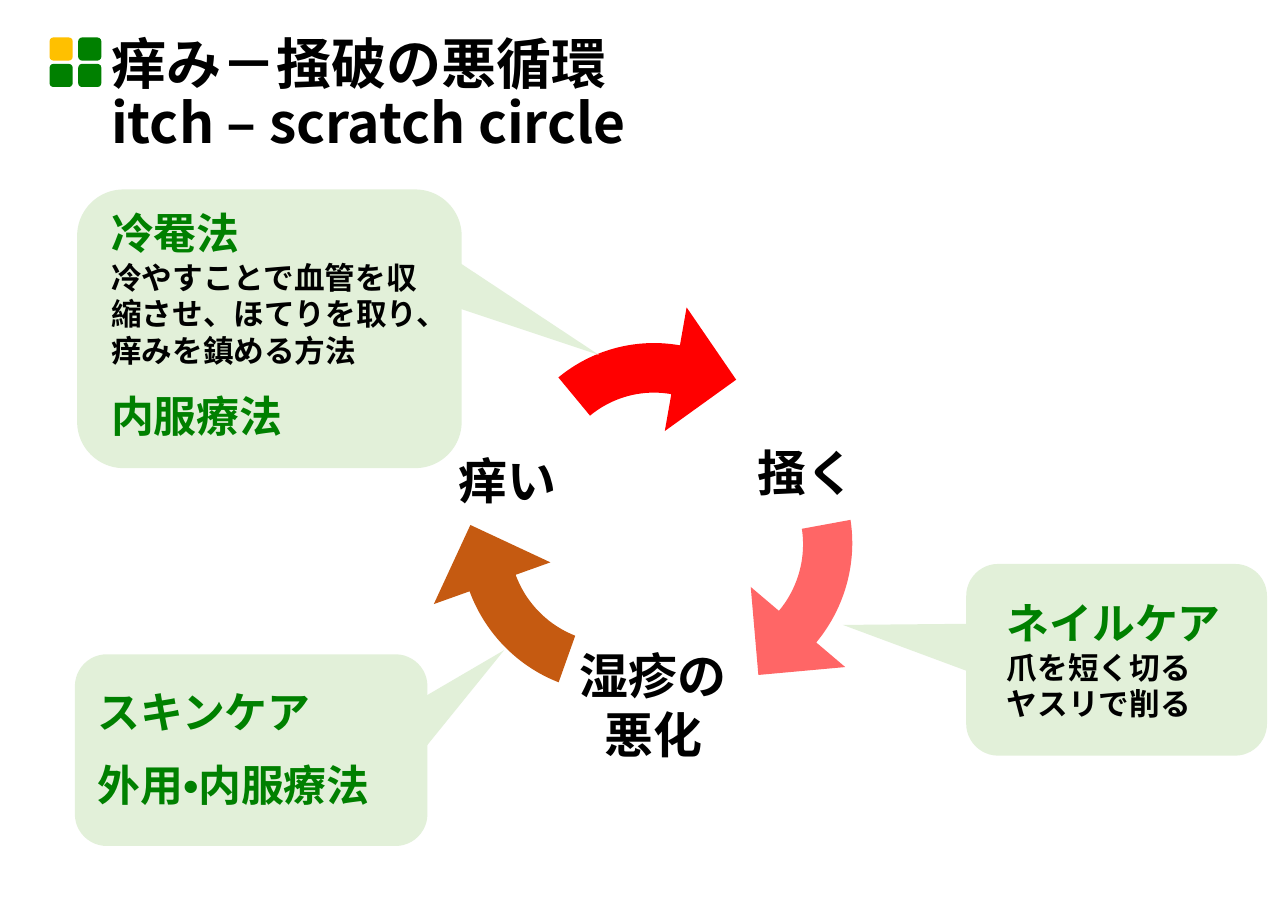
"""Build the itch and scratch circle slide with its care callouts."""
import math
from dataclasses import dataclass

import lxml.etree
import pptx
import pptx.dml.color
import pptx.enum.shapes
import pptx.enum.text
import pptx.oxml.ns
import pptx.util

Inches = pptx.util.Inches
qn = pptx.oxml.ns.qn
SHAPE = pptx.enum.shapes.MSO_SHAPE
ALIGN = pptx.enum.text.PP_ALIGN
ANCHOR = pptx.enum.text.MSO_ANCHOR
COLORS = {
    "text": "000000",
    "green": "008000",
    "yellow": "FFC000",
    "callout": "E2F0D9",
    "red": "FF0000",
    "pink": "FF6666",
    "brown": "C55A11",
}
BODY_FONT = "Arial"
TITLE_FONT = "Noto Sans CJK JP"
RING_WIDTH, RING_HEIGHT = 2.69, 2.73
OUTER_RADIUS, INNER_RADIUS = 1.36, 0.91
OUTER_BARB, INNER_BARB, TIP_RADIUS = 1.71, 0.57, 1.27
TAIL_ANGLE, TOP_ANGLE, NECK_ANGLE, TIP_ANGLE = -129.6, -90, -80, -54
ARROW_SEGMENTS = "CCLCCLLL"


@dataclass(frozen=True)
class Bounds:
    left: float
    top: float
    width: float
    height: float

    def lengths(self) -> list:
        return [Inches(v) for v in (self.left, self.top, self.width, self.height)]


@dataclass(frozen=True)
class Line:
    text: str
    size: int
    color: str = "text"
    space_before: int = 0


@dataclass(frozen=True)
class Callout:
    bubble: Bounds
    pointer: Bounds
    rotation: float
    apex: float
    text_bounds: Bounds
    lines: tuple


@dataclass(frozen=True)
class CycleArrow:
    bounds: Bounds
    rotation: float
    color: str


@dataclass(frozen=True)
class CycleLabel:
    bounds: Bounds
    texts: tuple


CALLOUTS = (
    Callout(Bounds(0.7, 1.72, 3.49, 2.53), Bounds(4.32, 2.04, 0.48, 1.78), 123.5, 0,
            Bounds(0.91, 1.83, 3.18, 2.29),
            (Line("冷罨法", 28, "green"),
             Line("冷やすことで血管を収縮させ、ほてりを取り、痒みを鎮める方法", 20),
             Line("内服療法", 28, "green", 14))),
    Callout(Bounds(0.68, 5.94, 3.2, 1.74), Bounds(3.75, 5.61, 0.48, 1.27), 39, 1,
            Bounds(0.79, 6.18, 3.07, 1.27),
            (Line("スキンケア", 28, "green"),
             Line("外用•内服療法", 28, "green", 14))),
    Callout(Bounds(8.77, 5.12, 2.73, 1.74), Bounds(8.05, 5.15, 0.48, 1.3), 278.7, 0.56,
            Bounds(9.04, 5.37, 2.67, 1.25),
            (Line("ネイルケア", 28, "green"),
             Line("爪を短く切る", 20),
             Line("ヤスリで削る", 20))),
)
ARROWS = (
    CycleArrow(Bounds(4.59, 3.11, 2.69, 2.73), 0, "red"),
    CycleArrow(Bounds(5.02, 3.62, 2.73, 2.69), 120, "pink"),
    CycleArrow(Bounds(4.16, 3.57, 2.73, 2.69), 240, "brown"),
)
LABELS = (
    CycleLabel(Bounds(6.78, 3.74, 1.08, 1.09), ("掻く",)),
    CycleLabel(Bounds(5.18, 5.85, 1.5, 1.09), ("湿疹の", "悪化")),
    CycleLabel(Bounds(4.07, 3.81, 1.08, 1.09), ("痒い",)),
)


def paint(shape, color: str) -> None:
    shape.shadow.inherit = False
    shape.fill.solid()
    shape.fill.fore_color.rgb = pptx.dml.color.RGBColor.from_string(COLORS[color])
    shape.line.fill.background()


def add_preset(page, preset, bounds: Bounds, color: str):
    shape = page.shapes.add_shape(preset, *bounds.lengths())
    paint(shape, color)
    return shape


def add_text(page, bounds: Bounds, lines: tuple, font: str = BODY_FONT):
    box = page.shapes.add_textbox(*bounds.lengths())
    frame = box.text_frame
    frame.word_wrap = True
    for index, line in enumerate(lines):
        para = frame.add_paragraph() if index else frame.paragraphs[0]
        para.text = line.text
        if line.space_before:
            para.space_before = pptx.util.Pt(line.space_before)
        for span in para.runs:
            span.font.size = pptx.util.Pt(line.size)
            span.font.bold = True
            span.font.name = font
            span.font.color.rgb = pptx.dml.color.RGBColor.from_string(COLORS[line.color])
            east_asian = lxml.etree.SubElement(span.font._element, qn("a:ea"))
            east_asian.set("typeface", font)
    return frame


def add_label(page, label: CycleLabel) -> None:
    frame = add_text(page, label.bounds, tuple(Line(text, 32) for text in label.texts))
    frame.word_wrap = False
    frame.vertical_anchor = ANCHOR.MIDDLE
    frame.margin_left = frame.margin_right = frame.margin_top = frame.margin_bottom = 0
    for para in frame.paragraphs:
        para.alignment = ALIGN.CENTER


def ring_point(radius: float, angle: float, tangent: float = 0) -> tuple:
    """Return a point on the ring, moved along its tangent by a share of the radius."""
    turn = math.radians(angle)
    across = math.cos(turn) - tangent * math.sin(turn)
    down = math.sin(turn) + tangent * math.cos(turn)
    return (Inches(RING_WIDTH / 2 + radius * across),
            Inches(RING_HEIGHT / 2 + radius * down))


def arc_points(radius: float, start: float, end: float) -> list:
    """Return the two handles and the end of a cubic arc."""
    handle = 4 / 3 * math.tan(math.radians(end - start) / 4)
    return [ring_point(radius, start, handle), ring_point(radius, end, -handle),
            ring_point(radius, end)]


def add_arrow(page, arrow: CycleArrow) -> None:
    outline = [
        *arc_points(INNER_RADIUS, NECK_ANGLE, TOP_ANGLE),
        *arc_points(INNER_RADIUS, TOP_ANGLE, TAIL_ANGLE),
        ring_point(OUTER_RADIUS, TAIL_ANGLE),
        *arc_points(OUTER_RADIUS, TAIL_ANGLE, TOP_ANGLE),
        *arc_points(OUTER_RADIUS, TOP_ANGLE, NECK_ANGLE),
        ring_point(OUTER_BARB, NECK_ANGLE),
        ring_point(TIP_RADIUS, TIP_ANGLE),
        ring_point(INNER_BARB, NECK_ANGLE),
    ]
    builder = page.shapes.build_freeform(*ring_point(INNER_RADIUS, NECK_ANGLE))
    builder.add_line_segments(outline, close=True)
    shape = builder.convert_to_shape()
    track = next(shape._element.iter(qn("a:path")))
    for vertex in track.iter(qn("a:pt")):
        vertex.set("x", str(int(vertex.get("x")) + shape.left))
        vertex.set("y", str(int(vertex.get("y")) + shape.top))
    track.set("w", str(Inches(RING_WIDTH)))
    track.set("h", str(Inches(RING_HEIGHT)))
    steps = iter(track.findall(qn("a:lnTo")))
    for kind in ARROW_SEGMENTS:
        step = next(steps)
        if kind == "C":
            curve = lxml.etree.Element(qn("a:cubicBezTo"))
            step.addprevious(curve)
            for part in (step, next(steps), next(steps)):
                curve.append(part[0])
                track.remove(part)
    shape.left, shape.top, shape.width, shape.height = arrow.bounds.lengths()
    shape.rotation = arrow.rotation
    paint(shape, arrow.color)


def add_callout(page, callout: Callout) -> None:
    pointer = add_preset(page, SHAPE.ISOSCELES_TRIANGLE, callout.pointer, "callout")
    pointer.adjustments[0] = callout.apex
    pointer.rotation = callout.rotation
    add_preset(page, SHAPE.FLOWCHART_ALTERNATE_PROCESS, callout.bubble, "callout")
    add_text(page, callout.text_bounds, callout.lines)


def add_title(page) -> None:
    for row in range(2):
        for column in range(2):
            color = "green" if row or column else "yellow"
            tile = Bounds(0.45 + 0.26 * column, 0.34 + 0.24 * row, 0.21, 0.21)
            add_preset(page, SHAPE.ROUNDED_RECTANGLE, tile, color)
    title = Line("痒み－掻破の悪循環\nitch – scratch circle", 36)
    frame = add_text(page, Bounds(0.91, 0.27, 9.92, 1.21), (title,), TITLE_FONT)
    frame.vertical_anchor = ANCHOR.MIDDLE
    frame.paragraphs[0].line_spacing = 0.9


def main() -> None:
    deck = pptx.Presentation()
    deck.slide_width, deck.slide_height = Inches(11.69), Inches(8.27)
    page = deck.slides.add_slide(deck.slide_layouts[6])
    for arrow in ARROWS:
        add_arrow(page, arrow)
    for label in LABELS:
        add_label(page, label)
    for callout in CALLOUTS:
        add_callout(page, callout)
    add_title(page)
    deck.save("out.pptx")


if __name__ == "__main__":
    main()
